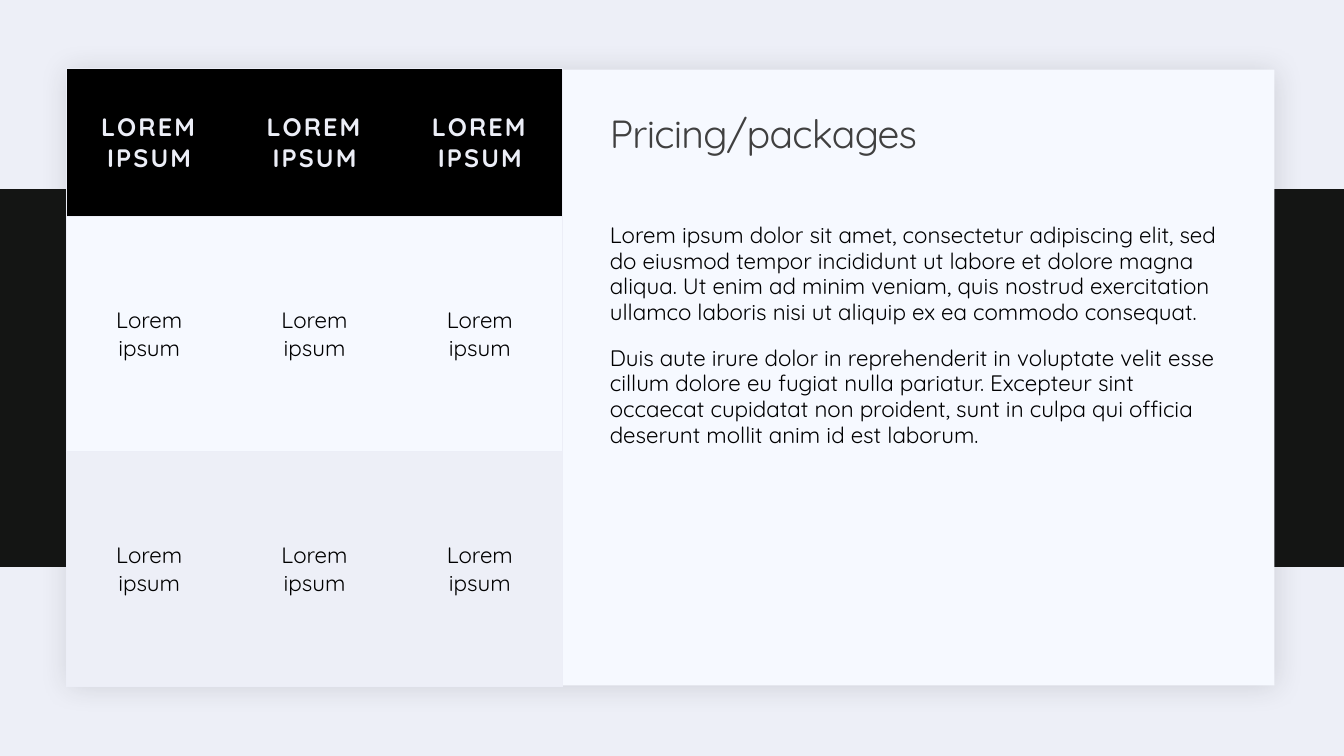
from lxml.etree import SubElement
from pptx import Presentation
from pptx.dml.color import RGBColor
from pptx.enum.shapes import MSO_SHAPE
from pptx.enum.text import MSO_ANCHOR, PP_ALIGN
from pptx.oxml.ns import qn
from pptx.util import Inches, Pt

MIST = RGBColor(0xED, 0xEF, 0xF7)
EDGE = RGBColor(0xEC, 0xEE, 0xF7)
PALE = RGBColor(0xF6, 0xF9, 0xFF)
INK = RGBColor(0x14, 0x15, 0x14)
SHADE = RGBColor(0x1F, 0x21, 0x25)
GRAY = RGBColor(0x40, 0x40, 0x40)
BLACK = RGBColor(0, 0, 0)
FONT = "Quicksand"

BODY = [
    "Lorem ipsum dolor sit amet, consectetur adipiscing elit, sed do eiusmod "
    "tempor incididunt ut labore et dolore magna aliqua. Ut enim ad minim veniam, "
    "quis nostrud exercitation ullamco laboris nisi ut aliquip ex ea commodo consequat.",
    "Duis aute irure dolor in reprehenderit in voluptate velit esse cillum dolore eu "
    "fugiat nulla pariatur. Excepteur sint occaecat cupidatat non proident, sunt in "
    "culpa qui officia deserunt mollit anim id est laborum.",
]
ROWS = [
    (["LOREM IPSUM"] * 3, 1.47, BLACK, dict(size=18, color=EDGE, bold=True, track=1.5)),
    (["Lorem ipsum"] * 3, 2.33, PALE, dict(size=16)),
    (["Lorem ipsum"] * 3, 2.33, MIST, dict(size=16)),
]


def write(frame, text, size=16, color=BLACK, bold=False, track=0,
          align=PP_ALIGN.LEFT, lead=1.0, before=0, after=0):
    lines = [text] if isinstance(text, str) else text
    for i, line in enumerate(lines):
        para = frame.add_paragraph() if i else frame.paragraphs[0]
        para.alignment = align
        para.line_spacing = lead
        para.space_before, para.space_after = Pt(before), Pt(after)
        run = para.add_run()
        run.text = line
        font = run.font
        font.name, font.size, font.bold = FONT, Pt(size), bold
        font.color.rgb = color
        if track:
            run._r.get_or_add_rPr().set("spc", str(int(track * 100)))


def add_text(slide, box, text, anchor=MSO_ANCHOR.TOP, right=0.1, **style):
    frame = slide.shapes.add_textbox(*map(Inches, box)).text_frame
    frame.word_wrap = True
    frame.vertical_anchor = anchor
    frame.margin_right = Inches(right)
    write(frame, text, **style)


def add_rect(slide, box, fill):
    rect = slide.shapes.add_shape(MSO_SHAPE.RECTANGLE, *map(Inches, box))
    rect.shadow.inherit = False
    rect.fill.solid()
    rect.fill.fore_color.rgb = fill
    rect.line.fill.background()
    return rect


def add_shade(shape):
    glow = SubElement(shape._element.spPr.find(qn("a:effectLst")), qn("a:outerShdw"),
                      blurRad=str(Pt(20)), dist=str(Pt(2)), dir=str(45 * 60000),
                      algn="ctr", rotWithShape="0")
    color = SubElement(glow, qn("a:srgbClr"), val=str(SHADE))
    SubElement(color, qn("a:alpha"), val="15000")


def set_edges(cell, sides):
    props = cell._tc.get_or_add_tcPr()
    for i, side in enumerate("LRTB"):
        line = props.makeelement(qn("a:ln" + side), {"w": str(Pt(1))})
        if side in sides:
            fill = SubElement(line, qn("a:solidFill"))
            SubElement(fill, qn("a:srgbClr"), val=str(EDGE))
        else:
            SubElement(line, qn("a:noFill"))
        props.insert(i, line)


def add_prices(slide, box):
    count = len(ROWS[0][0])
    table = slide.shapes.add_table(len(ROWS), count, *map(Inches, box)).table
    table.horz_banding = False
    for col in table.columns:
        col.width = Inches(box[2] / count)
    for r, (texts, height, fill, style) in enumerate(ROWS):
        table.rows[r].height = Inches(height)
        for c, text in enumerate(texts):
            cell = table.cell(r, c)
            cell.fill.solid()
            cell.fill.fore_color.rgb = fill
            cell.vertical_anchor = MSO_ANCHOR.MIDDLE
            cell.margin_left = cell.margin_right = Inches(0.25)
            cell.margin_top = cell.margin_bottom = Inches(0.25)
            write(cell.text_frame, text, align=PP_ALIGN.CENTER, **style)
            set_edges(cell, "TB" + "L" * (c == 0) + "R" * (c == count - 1))


def add_copy(slide, box):
    left, top, width, height = box
    add_text(slide, (left, top, width, 0.64), "Pricing/packages",
             anchor=MSO_ANCHOR.MIDDLE, size=28, color=GRAY, track=-0.5, lead=0.9)
    add_text(slide, (left, top + 1.13, width, height - 1.13), BODY,
             right=0, lead=0.96, before=12, after=2)


def add_back(slide, box):
    left, top, width, height = box
    slide.background.fill.solid()
    slide.background.fill.fore_color.rgb = MIST
    add_rect(slide, (left, top + height / 4, width, height / 2), INK)
    add_shade(add_rect(slide, (left + 0.69 - 0.03, top + 0.69, width - 1.35, 6.11), PALE))


def main():
    deck = Presentation()
    deck.slide_width, deck.slide_height = Inches(13.33), Inches(7.5)
    slide = deck.slides.add_slide(deck.slide_layouts[6])
    add_back(slide, (0, 0, 13.33, 7.5))
    add_copy(slide, (5.95, 1.03, 6.25, 5.44))
    add_prices(slide, (0.66, 0.68, 4.92, 6.13))
    deck.save("out.pptx")


if __name__ == "__main__":
    main()
